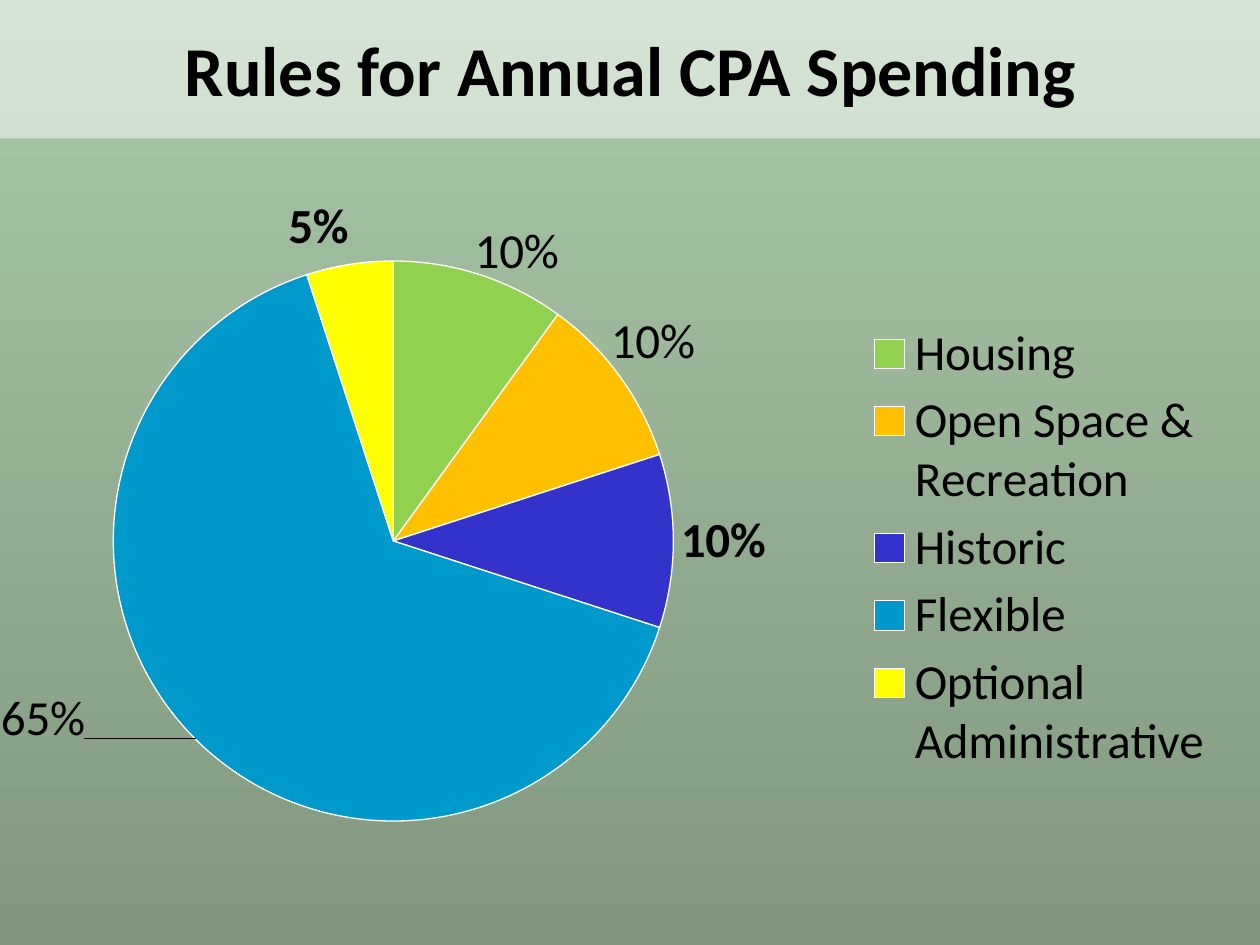
from lxml.etree import SubElement
from pptx import Presentation
from pptx.chart.data import CategoryChartData
from pptx.dml.color import RGBColor
from pptx.enum.chart import XL_CHART_TYPE, XL_LABEL_POSITION, XL_LEGEND_POSITION
from pptx.enum.shapes import MSO_SHAPE
from pptx.enum.text import MSO_ANCHOR, PP_ALIGN
from pptx.oxml import parse_xml
from pptx.oxml.ns import nsdecls, qn
from pptx.util import Cm, Pt

HUES = {
    "top": "AAC8A8", "base": "81977F", "white": "FFFFFF", "black": "000000",
    "green": "92D050", "amber": "FFC000", "blue": "3333CC",
    "teal": "0099CC", "yellow": "FFFF00",
}
PARTS = [
    ("Housing", 10, "green"),
    ("Open Space & Recreation", 10, "amber"),
    ("Historic", 10, "blue"),
    ("Flexible", 65, "teal"),
    ("Optional Administrative", 5, "yellow"),
]
SHIFTS = {0: (-0.005, 0.02), 1: (-0.01, 0), 3: (-0.07, -0.08)}
LARGE = {"name": "Calibri", "size": Pt(28)}


def hue(name):
    return RGBColor.from_string(HUES[name])


def style(item, values):
    for key, value in values.items():
        setattr(item, key, value)


def ink(font, values):
    style(font, values)
    font.color.rgb = hue("black")


def place(shape, left, top, width, height):
    style(shape, {"left": Cm(left), "top": Cm(top),
                  "width": Cm(width), "height": Cm(height)})


def layout(box, target=""):
    inner = f'<c:layoutTarget val="{target}"/>' if target else ""
    if len(box) == 4:
        inner += '<c:xMode val="edge"/><c:yMode val="edge"/>'
    inner += "".join(f'<c:{key} val="{value}"/>' for key, value in zip("xywh", box))
    return parse_xml(f'<c:layout {nsdecls("c")}><c:manualLayout>{inner}'
                     "</c:manualLayout></c:layout>")


def set_layout(node, index, box, target=""):
    for old in node.findall(qn("c:layout")):
        node.remove(old)
    node.insert(index, layout(box, target))


def add_ground(slide):
    fill = slide.background.fill
    fill.gradient()
    fill.gradient_angle = 270
    for stop, name, spot in zip(fill.gradient_stops, ("top", "base"), (0, 1)):
        stop.color.rgb = hue(name)
        stop.position = spot


def add_band(slide):
    band = slide.shapes.add_shape(MSO_SHAPE.RECTANGLE, 0, 0, Cm(25.4), Cm(2.79))
    band.shadow.inherit = False
    band.fill.solid()
    band.fill.fore_color.rgb = hue("white")
    band.line.fill.background()
    tint = band.element.find(".//" + qn("a:srgbClr"))
    SubElement(tint, qn("a:alpha"), val="50000")
    slide.shapes.element.insert(2, band.element)


def add_title(slide, text):
    title = slide.shapes.title
    place(title, 0.43, 0.41, 24.56, 1.96)
    frame = title.text_frame
    style(frame, {"text": text, "word_wrap": True,
                  "vertical_anchor": MSO_ANCHOR.MIDDLE})
    line = frame.paragraphs[0]
    line.alignment = PP_ALIGN.CENTER
    ink(line.runs[0].font, {"name": "Calibri", "size": Pt(40), "bold": True})


def add_labels(plot, series):
    plot.has_data_labels = True
    labels = plot.data_labels
    style(labels, {"show_percentage": True, "show_value": False,
                   "number_format": "0%", "number_format_is_linked": False,
                   "position": XL_LABEL_POSITION.OUTSIDE_END})
    ink(labels.font, {**LARGE, "bold": True})
    for index, shift in SHIFTS.items():
        label = series.points[index].data_label
        line = label.text_frame.paragraphs[0]
        run = line.add_run()
        run.text = f"{PARTS[index][1]}%"
        ink(run.font, {**LARGE, "bold": False})
        label.position = XL_LABEL_POSITION.OUTSIDE_END
    group = series.data_labels
    style(group, {"show_percentage": True, "show_value": False,
                  "number_format": "0%", "number_format_is_linked": False,
                  "position": XL_LABEL_POSITION.OUTSIDE_END})
    ink(group.font, {**LARGE, "bold": True})
    for node, shift in zip(series.points[0].data_label.font and
                           plot.chart.element.iter(qn("c:dLbl")), SHIFTS.values()):
        set_layout(node, 1, shift)


def add_pie(slide):
    data = CategoryChartData()
    data.categories = [name for name, _, _ in PARTS]
    data.add_series("Series 1", [value for _, value, _ in PARTS])
    chart = slide.shapes.add_chart(XL_CHART_TYPE.PIE, Cm(-2.97), Cm(3.61),
                                   Cm(30.28), Cm(13.77), data).chart
    style(chart, {"has_title": False, "has_legend": True})
    ink(chart.font, {"name": "League Spartan", "size": Pt(18)})
    plot = chart.plots[0]
    plot.vary_by_categories = True
    series = plot.series[0]
    for index, (_, _, name) in enumerate(PARTS):
        shape = series.points[index].format
        shape.fill.solid()
        shape.fill.fore_color.rgb = hue(name)
        shape.line.color.rgb = hue("white")
        shape.line.width = Pt(0.75)
    add_labels(plot, series)
    legend = chart.legend
    style(legend, {"position": XL_LEGEND_POSITION.RIGHT, "include_in_layout": False})
    ink(legend.font, LARGE)
    area = chart.element.find(".//" + qn("c:plotArea"))
    set_layout(area, 0, (0.17, 0.12, 0.38, 0.82), "inner")
    node = chart.element.find(".//" + qn("c:legend"))
    set_layout(node, 1, (0.67, 0.2, 0.24, 0.68))


def main():
    deck = Presentation()
    style(deck, {"slide_width": Cm(25.4), "slide_height": Cm(19.05)})
    slide = deck.slides.add_slide(deck.slide_layouts[5])
    add_ground(slide)
    add_band(slide)
    add_title(slide, "Rules for Annual CPA Spending")
    add_pie(slide)
    deck.save("out.pptx")


if __name__ == "__main__":
    main()
